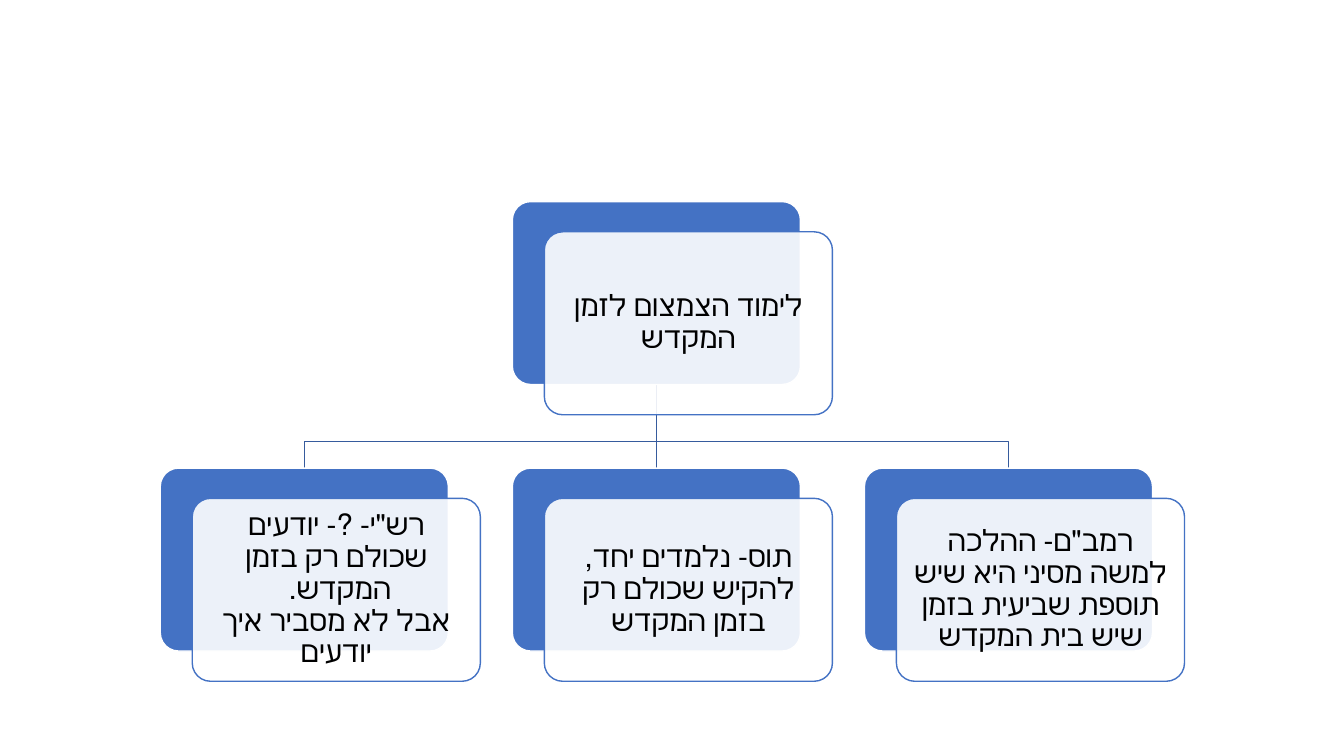
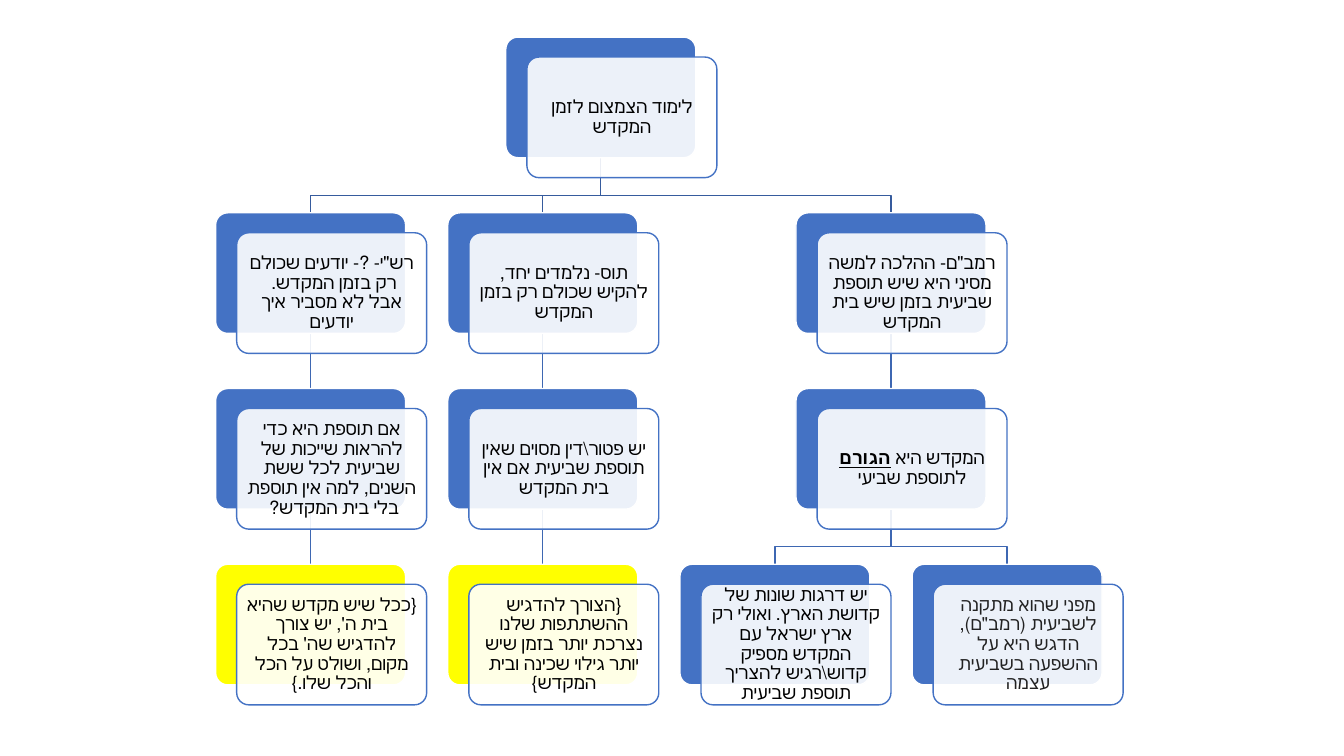
from dataclasses import dataclass, field
from itertools import count

from lxml import etree
from pptx import Presentation
from pptx.dml.color import RGBColor
from pptx.enum.shapes import MSO_CONNECTOR, MSO_SHAPE
from pptx.enum.text import MSO_ANCHOR, PP_ALIGN
from pptx.oxml.ns import qn
from pptx.util import Pt

ROUND = MSO_SHAPE.ROUNDED_RECTANGLE
STRAIGHT = MSO_CONNECTOR.STRAIGHT
MIDDLE = MSO_ANCHOR.MIDDLE
CENTER = PP_ALIGN.CENTER

COLORS = {
    "blue": "4472C4",
    "yellow": "FFFF00",
    "white": "FFFFFF",
    "black": "000000",
    "gray": "222222",
    "dark": "365B9D",
    "mid": "3E67B2",
}
BLANK = 6

# Proportions of a tree, as shares of the card width
HIGH = 0.635
COL = 1.222
ROW = 0.925
SHIFT_X = 0.111
SHIFT_Y = 0.105
DROP = 0.0925

TOPIC = "לימוד הצמצום לזמן המקדש"
RASHI = "רש\"י- ?- יודעים שכולם רק בזמן המקדש. \nאבל לא מסביר איך יודעים"
TOSAFOT = "תוס- נלמדים יחד, להקיש שכולם רק בזמן המקדש"
RAMBAM = "רמב\"ם- ההלכה למשה מסיני היא שיש תוספת שביעית בזמן שיש בית המקדש"


@dataclass
class Node:
    """A card of the tree; words between asterisks are bold and underlined."""
    text: str
    kids: list = field(default_factory=list)
    fill: str = "blue"
    font: str = "Calibri"
    ink: str = "black"
    x: float = 0
    y: float = 0


@dataclass
class Grid:
    left: float
    top: float
    wide: float
    size: float

    @property
    def high(self):
        return self.wide * HIGH


SHORT = Node(TOPIC, [Node(RASHI), Node(TOSAFOT), Node(RAMBAM)])

FULL = Node(TOPIC, [
    Node(RASHI, [
        Node("אם תוספת היא כדי להראות שייכות של שביעית לכל ששת השנים, "
             "למה אין תוספת בלי בית המקדש? ", [
                 Node("{ככל שיש מקדש שהיא בית ה', יש צורך להדגיש שה' בכל מקום, "
                      "ושולט על הכל והכל שלו.}", fill="yellow"),
             ]),
    ]),
    Node(TOSAFOT, [
        Node(r"יש פטור\דין מסוים שאין תוספת שביעית אם אין בית המקדש", [
            Node("{הצורך להדגיש ההשתתפות שלנו נצרכת יותר בזמן שיש יותר "
                 "גילוי שכינה ובית המקדש}", fill="yellow"),
        ]),
    ]),
    Node(RAMBAM, [
        Node("המקדש היא *הגורם* לתוספת שביעי", [
            Node("יש דרגות שונות של קדושת הארץ. ואולי רק ארץ ישראל עם המקדש "
                 r"מספיק קדוש\רגיש להצריך תוספת שביעית"),
            Node("מפני שהוא מתקנה לשביעית (רמב\"ם), הדגש היא על ההשפעה "
                 "בשביעית עצמה", font="Arial", ink="gray"),
        ]),
    ]),
])


def color(name):
    return RGBColor.from_string(COLORS[name])


def place(node, grid, cols, depth=0):
    """Give each leaf the next column and centre each parent over its kids."""
    for kid in node.kids:
        place(kid, grid, cols, depth + 1)
    if node.kids:
        node.x = (node.kids[0].x + node.kids[-1].x) / 2
    else:
        node.x = grid.left + next(cols) * grid.wide * COL
    node.y = grid.top + depth * grid.wide * ROW


def add_link(slide, grid, node, kid, tint):
    """Join the bottom of a card to the top of one below it."""
    half = grid.wide / 2
    start, end = Pt(node.x + half), Pt(kid.x + half)
    top, foot = Pt(node.y + grid.high), Pt(kid.y)
    if abs(end - start) < Pt(1):
        link = slide.shapes.add_connector(STRAIGHT, start, top, start, foot)
    else:
        bend = Pt(kid.y - grid.wide * DROP)
        path = slide.shapes.build_freeform(start, top)
        path.add_line_segments([(start, bend), (end, bend), (end, foot)], close=False)
        link = path.convert_to_shape()
        link.fill.background()
    link.line.color.rgb = color(tint)
    link.line.width = Pt(1)
    etree.SubElement(link._element.spPr, qn("a:effectLst"))


def add_links(slide, grid, node, tint="dark"):
    for kid in node.kids:
        add_link(slide, grid, node, kid, tint)
        add_links(slide, grid, kid, "mid")


def add_box(slide, grid, x, y, fill, edge):
    box = slide.shapes.add_shape(ROUND, Pt(x), Pt(y), Pt(grid.wide), Pt(grid.high))
    box.adjustments[0] = 0.1
    box.shadow.inherit = False
    box.fill.solid()
    box.fill.fore_color.rgb = color(fill)
    box.line.color.rgb = color(edge)
    box.line.width = Pt(1)
    return box


def fade(box, share):
    tone = box._element.spPr.find(qn("a:solidFill"))[0]
    etree.SubElement(tone, qn("a:alpha")).set("val", str(share * 1000))


def add_run(para, text, node, size, strong):
    run = para.add_run()
    run.text = text
    font = run.font
    font.name = node.font
    font.size = Pt(size)
    font.color.rgb = color(node.ink)
    if strong:
        font.bold = font.underline = True


def write(box, node, size):
    frame = box.text_frame
    frame.word_wrap = True
    frame.vertical_anchor = MIDDLE
    frame.margin_left = frame.margin_right = Pt(size * 0.3)
    frame.margin_top = frame.margin_bottom = Pt(size * 0.3)
    para = frame.paragraphs[0]
    para.alignment = CENTER
    para.line_spacing = 0.9
    para._p.get_or_add_pPr().set("rtl", "1")
    for row, line in enumerate(node.text.split("\n")):
        if row:
            para.add_line_break()
        for part, text in enumerate(line.split("*")):
            add_run(para, text, node, size, part % 2 == 1)


def add_cards(slide, grid, node):
    add_box(slide, grid, node.x, node.y, node.fill, "white")
    front = add_box(slide, grid, node.x + grid.wide * SHIFT_X,
                    node.y + grid.wide * SHIFT_Y, "white", "blue")
    fade(front, 90)
    write(front, node, grid.size)
    for kid in node.kids:
        add_cards(slide, grid, kid)


def add_tree(deck, root, grid):
    slide = deck.slides.add_slide(deck.slide_layouts[BLANK])
    place(root, grid, count())
    add_links(slide, grid, root)
    add_cards(slide, grid, root)


def main():
    deck = Presentation()
    deck.slide_width, deck.slide_height = Pt(960), Pt(540)
    add_tree(deck, SHORT, Grid(left=114.5, top=144, wide=205.8, size=21))
    add_tree(deck, FULL, Grid(left=154, top=26.5, wide=135.7, size=13))
    deck.save("out.pptx")


if __name__ == "__main__":
    main()
